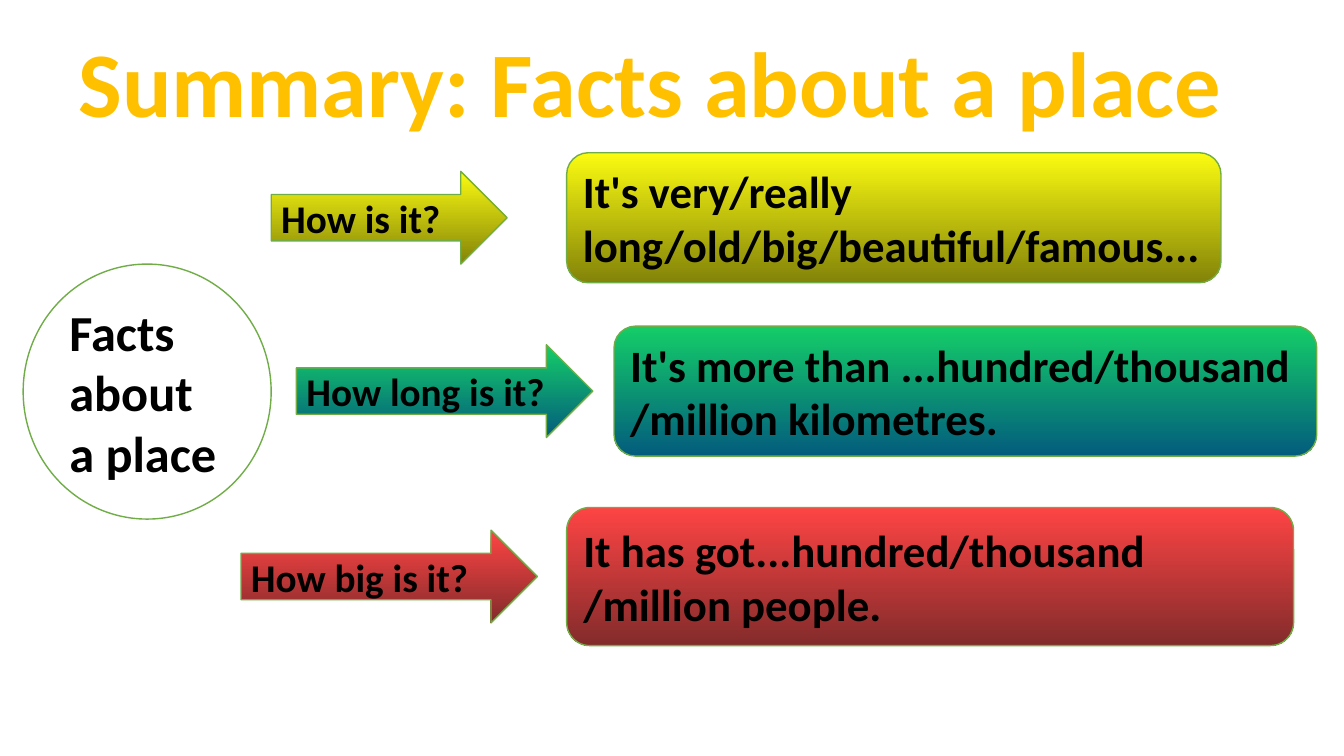
from pptx import Presentation
from pptx.dml.color import RGBColor
from pptx.enum import shapes, text
from pptx.util import Inches, Pt

TITLE = "Summary: Facts about a place"
TOPIC = "Facts about a place"

# question, arrow left and width, answer lines, box left, width and height,
# centre height of the row, gradient
ROWS = [
    ("How is it?", 2.69, 2.34,
     ["It's very/really long/old/big/beautiful/famous..."],
     5.62, 6.49, 1.29, 2.16, "yellow"),
    ("How long is it?", 2.94, 2.94,
     ["It's more than ...hundred/thousand", "/million kilometres."],
     6.09, 6.97, 1.29, 3.88, "green"),
    ("How big is it?", 2.39, 2.94,
     ["It has got...hundred/thousand", "/million people."],
     5.62, 7.21, 1.37, 5.72, "red"),
]
ARROW_H = 0.92

THEME = {
    "font": "Calibri",
    "title": "FFC000", "ink": "000000", "line": "70AD47", "paper": "FFFFFF",
    "yellow": ("FBFB11", "838309"),
    "green": ("14CD68", "035C7D"),
    "red": ("FE4444", "832B2B"),
    "size": {"title": 66, "topic": 36, "answer": 32, "question": 28},
}

KIND = shapes.MSO_SHAPE


def rgb(name):
    return RGBColor.from_string(THEME[name])


def write(frame, lines, role, color="ink", align=text.PP_ALIGN.LEFT):
    for i, line in enumerate(lines):
        para = frame.paragraphs[0] if i == 0 else frame.add_paragraph()
        para.alignment = align
        run = para.add_run()
        run.text = line
        font = run.font
        font.name, font.bold = THEME["font"], True
        font.size = Pt(THEME["size"][role])
        font.color.rgb = rgb(color)


def draw(slide, kind, box, lines, role, fill):
    """Add an outlined shape; fill names a plain colour or a pair to blend."""
    shape = slide.shapes.add_shape(kind, *map(Inches, box))
    shape.shadow.inherit = False
    shape.line.color.rgb = rgb("line")
    shape.line.width = Pt(1)
    if isinstance(THEME[fill], tuple):
        shape.fill.gradient()
        shape.fill.gradient_angle = 270
        for stop, tone in zip(shape.fill.gradient_stops, THEME[fill]):
            stop.color.rgb = RGBColor.from_string(tone)
    else:
        shape.fill.solid()
        shape.fill.fore_color.rgb = rgb(fill)
    shape.text_frame.vertical_anchor = text.MSO_ANCHOR.MIDDLE
    write(shape.text_frame, lines, role)


def main():
    deck = Presentation()
    deck.slide_width, deck.slide_height = Inches(13.33), Inches(7.5)
    slide = deck.slides.add_slide(deck.slide_layouts[6])

    draw(slide, KIND.OVAL, (0.23, 2.62, 2.46, 2.53), [TOPIC], "topic", "paper")
    for ask, ask_x, ask_w, reply, x, w, h, mid, fill in ROWS:
        draw(slide, KIND.RIGHT_ARROW, (ask_x, mid - ARROW_H / 2, ask_w, ARROW_H),
             [ask], "question", fill)
        draw(slide, KIND.ROUNDED_RECTANGLE, (x, mid - h / 2, w, h),
             reply, "answer", fill)

    title = slide.shapes.add_textbox(*map(Inches, (0.68, 0.2, 11.54, 1.21)))
    frame = title.text_frame
    frame.word_wrap = True
    # The line nearly fills the box, so it gets the full width.
    frame.margin_left = frame.margin_right = 0
    write(frame, [TITLE], "title", "title", text.PP_ALIGN.CENTER)

    deck.save("out.pptx")


if __name__ == "__main__":
    main()
